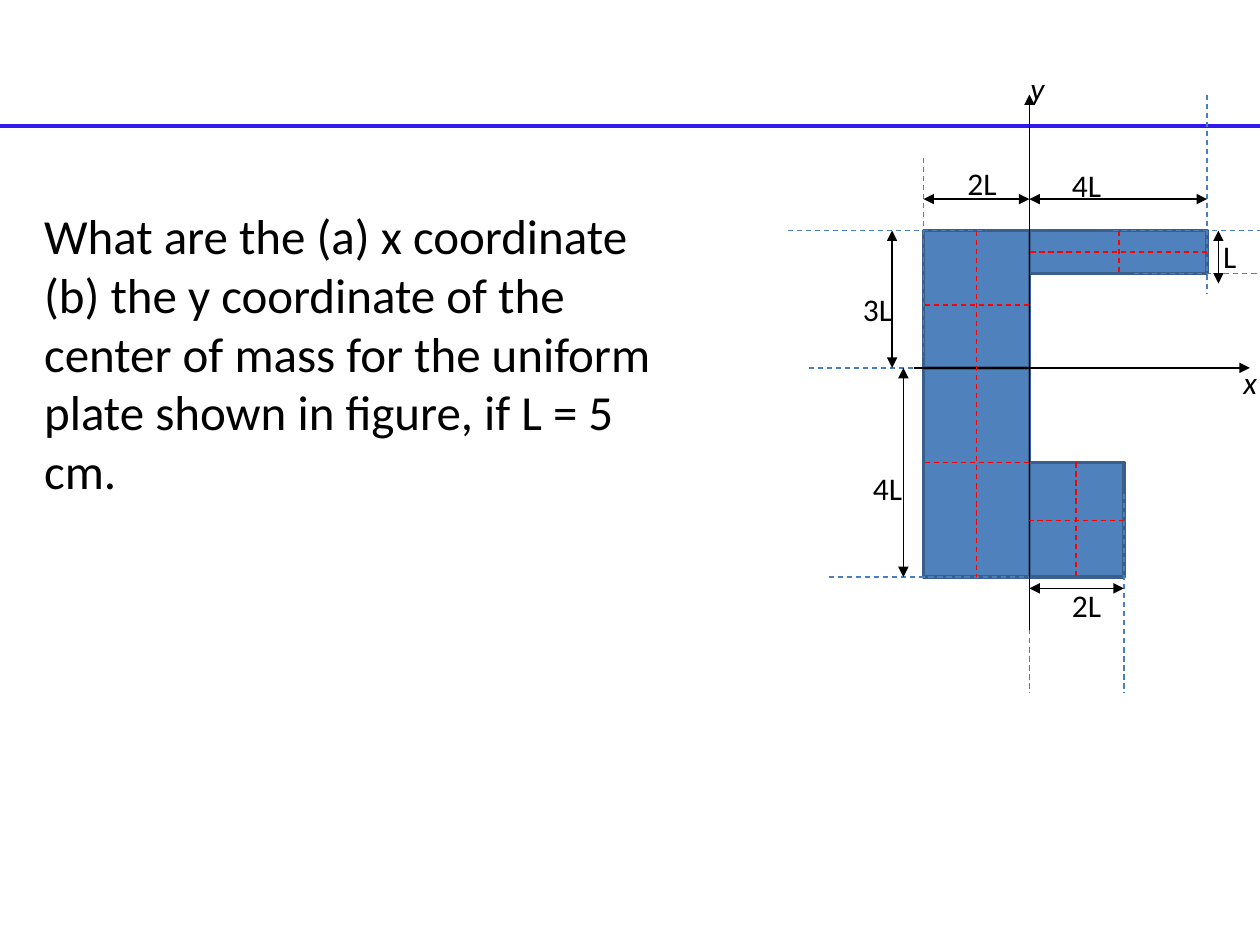
from dataclasses import dataclass

from lxml.etree import SubElement
from pptx import Presentation
from pptx.dml.color import RGBColor
from pptx.enum.dml import MSO_LINE
from pptx.enum.shapes import MSO_CONNECTOR, MSO_SHAPE
from pptx.enum.text import MSO_ANCHOR, MSO_AUTO_SIZE, PP_ALIGN
from pptx.oxml.ns import qn
from pptx.util import Inches, Pt


@dataclass(frozen=True)
class Theme:
    """Colours, font and sizes of the slide."""
    font: str = "Calibri"
    ink: str = "000000"
    rule: str = "331AEC"
    plate: str = "4F81BD"
    edge: str = "3A5F8C"
    guide: str = "4B7EBC"
    split: str = "FF0000"
    body: int = 28
    label: int = 18
    thin: float = 0.75
    axis: float = 1
    border: float = 2
    thick: float = 2.25


class Sketch:
    """Draws the parts of the figure on one slide."""

    def __init__(self, slide, theme):
        self.slide = slide
        self.theme = theme

    def add_run(self, frame, text, size, slant=False):
        """Add one run of styled text."""
        part = frame.paragraphs[0]
        part.alignment = PP_ALIGN.LEFT
        run = part.add_run()
        run.text = text
        run.font.name = self.theme.font
        run.font.size = Pt(size)
        run.font.italic = slant
        run.font.color.rgb = RGBColor.from_string(self.theme.ink)

    def ask(self, text, left, top, width, height):
        """Place the question in the subtitle."""
        holder = self.slide.placeholders[1]
        holder.left, holder.top = Inches(left), Inches(top)
        holder.width, holder.height = Inches(width), Inches(height)
        frame = holder.text_frame
        frame.word_wrap = True
        frame.auto_size = MSO_AUTO_SIZE.NONE
        frame.vertical_anchor = MSO_ANCHOR.TOP
        self.add_run(frame, text, self.theme.body)

    def plate(self, left, top, right, base):
        """Draw one block of the plate."""
        shape = self.slide.shapes.add_shape(
            MSO_SHAPE.RECTANGLE, Inches(left), Inches(top),
            Inches(right - left), Inches(base - top))
        shape.shadow.inherit = False
        shape.fill.solid()
        shape.fill.fore_color.rgb = RGBColor.from_string(self.theme.plate)
        shape.line.color.rgb = RGBColor.from_string(self.theme.edge)
        shape.line.width = Pt(self.theme.border)

    def line(self, ends, color, width, dash=False, heads=()):
        """Draw a line, dashed or with arrowheads if asked."""
        link = self.slide.shapes.add_connector(
            MSO_CONNECTOR.STRAIGHT, *(Inches(n) for n in ends))
        link.line.color.rgb = RGBColor.from_string(color)
        link.line.width = Pt(width)
        if dash:
            link.line.dash_style = MSO_LINE.DASH
        props = link._element.spPr
        for head in heads:
            SubElement(props.find(qn("a:ln")), qn(f"a:{head}"), type="triangle")
        SubElement(props, qn("a:effectLst"))

    def guide(self, *ends):
        """Draw a dashed guide."""
        self.line(ends, self.theme.guide, self.theme.thin, dash=True)

    def split(self, *ends):
        """Draw a dashed red split."""
        self.line(ends, self.theme.split, self.theme.thin, dash=True)

    def span(self, *ends):
        """Draw a measure with two arrowheads."""
        self.line(ends, self.theme.ink, self.theme.thin,
                  heads=("headEnd", "tailEnd"))

    def axis(self, width, *ends):
        """Draw an axis that points to its start."""
        self.line(ends, self.theme.ink, width, heads=("headEnd",))

    def label(self, text, left, top, width=0.44, slant=False):
        """Add a short label."""
        box = self.slide.shapes.add_textbox(
            Inches(left), Inches(top), Inches(width), Inches(0.4))
        box.text_frame.word_wrap = False
        box.text_frame.auto_size = MSO_AUTO_SIZE.SHAPE_TO_FIT_TEXT
        self.add_run(box.text_frame, text, self.theme.label, slant)


def main():
    """Build and save the slide."""
    deck = Presentation()
    deck.slide_width, deck.slide_height = Inches(10), Inches(7.5)
    slide = deck.slides.add_slide(deck.slide_layouts[0])
    title = slide.shapes.title._element
    title.getparent().remove(title)
    theme = Theme()
    art = Sketch(slide, theme)

    west, zero, mid, east = 7.33, 8.17, 8.92, 9.58
    top, arm, level, foot, base = 1.83, 2.17, 2.92, 3.67, 4.58
    reach = 1.58

    art.line((0, 1, 10, 1), theme.rule, theme.thick)
    art.ask("What are the (a) x coordinate (b) the y coordinate of the center "
            "of mass for the uniform plate shown in figure, if L = 5 cm.",
            0.25, 1.58, 5.25, 3)

    for block in ((west, top, zero, level), (west, level, zero, base),
                  (zero, top, east, arm), (zero, foot, mid, base)):
        art.plate(*block)

    for left, y in ((6.25, top), (6.42, level), (6.58, base)):
        art.guide(left, y, left + reach, y)
    for left, y in ((8.83, top), (9, arm)):
        art.guide(left, y, 10, y)
    for x, y in ((east, 0.75), (zero, 0.92), (mid, 3.92), (zero, 3.92),
                 (west, 1.25)):
        art.guide(x, y, x, y + reach)

    for ends in ((7.08, top, 7.08, level), (7.17, level, 7.17, base),
                 (east, 1.58, zero, 1.58), (zero, 1.58, west, 1.58),
                 (mid, 4.67, zero, 4.67), (9.67, top, 9.67, 2.25)):
        art.span(*ends)

    art.axis(theme.thin, zero, 0.75, zero, 5)
    art.axis(theme.axis, 9.92, level, 7.25, level)

    for text, left, y in (("3L", 6.75, 2.25), ("4L", 6.83, 3.67),
                          ("4L", 8.41, 1.27), ("2L", 8.41, 4.6),
                          ("2L", 7.58, 1.25)):
        art.label(text, left, y)
    art.label("L", 9.61, top, 0.31)
    art.label("y", 8.08, 0.5, 0.32, slant=True)
    art.label("x", 9.77, 2.83, 0.31, slant=True)

    for x, start, end in ((8.54, foot, base), (7.75, top, base),
                          (8.88, top, arm)):
        art.split(x, start, x, end)
    for start, end, y in ((mid, zero, 4.13), (zero, west, foot),
                          (zero, west, 2.42), (east, zero, 2)):
        art.split(start, y, end, y)

    deck.save("out.pptx")


if __name__ == "__main__":
    main()
